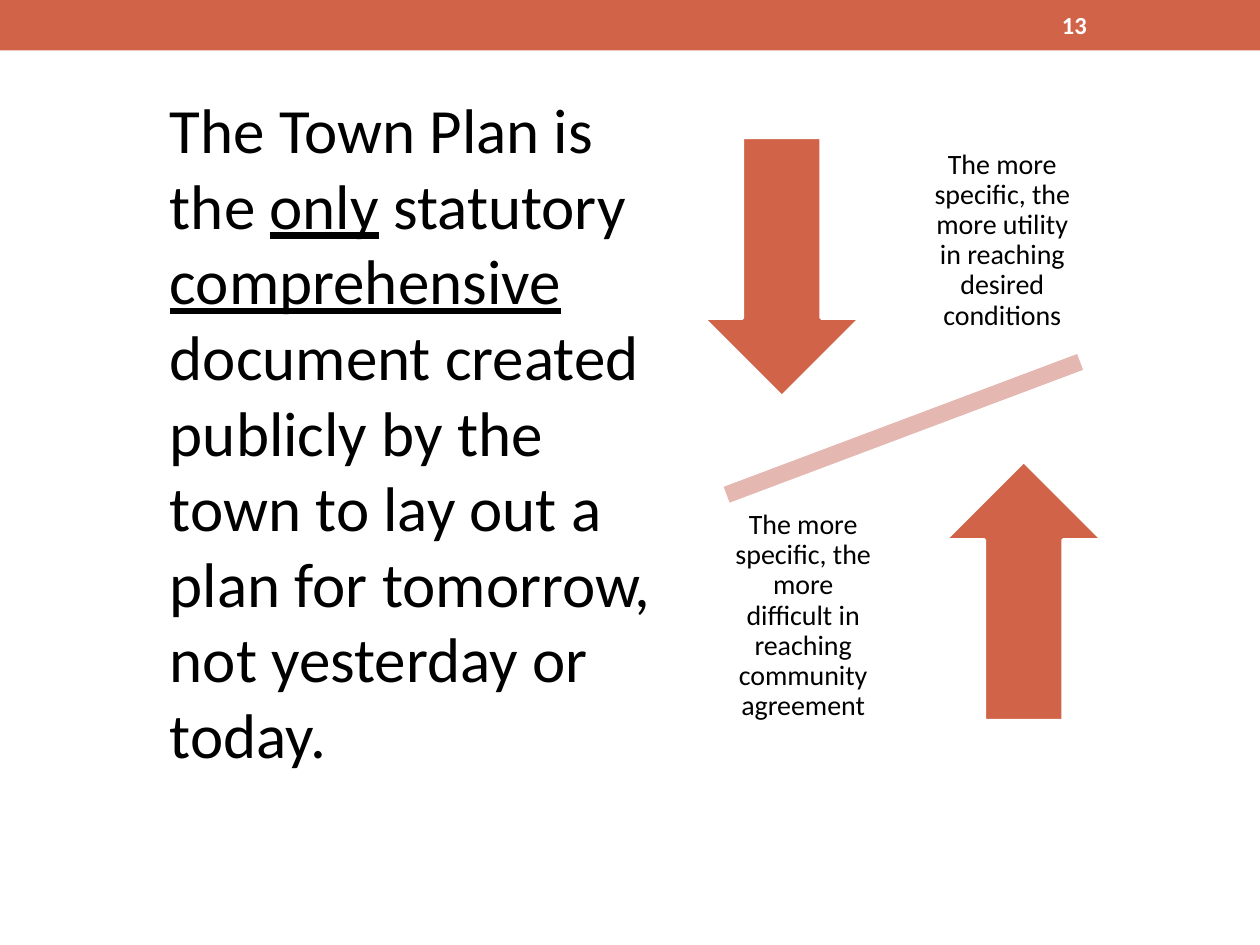
from pptx import Presentation
from pptx.util import Inches, Pt
from pptx.dml.color import RGBColor
from pptx.enum.shapes import MSO_SHAPE as Geo
from pptx.enum.text import PP_ALIGN as Align, MSO_ANCHOR as Anchor

RUST, PINK, WHITE, BLACK = "D16349", "E5B7B1", "FFFFFF", "000000"


def color(item, hue):
    """Set a solid colour on a fill or a font."""
    if hasattr(item, "solid"):
        item.solid()
        item.fore_color.rgb = RGBColor.from_string(hue)
    else:
        item.color.rgb = RGBColor.from_string(hue)


def add_text(box, parts, size, hue):
    """Add a wrapped text box of (words, underlined) parts."""
    frame = slide.shapes.add_textbox(*map(Inches, box)).text_frame
    frame.word_wrap = True
    for words, under in parts:
        run = frame.paragraphs[0].add_run()
        run.text = words
        run.font.name = "Calibri"
        run.font.size = Pt(size)
        color(run.font, hue)
        if under:
            run.font.underline = True
    return frame


deck = Presentation()
deck.slide_width, deck.slide_height = Inches(10), Inches(7.5)
slide = deck.slides.add_slide(deck.slide_layouts[6])

# Header band and page number
band = slide.shapes.add_shape(Geo.RECTANGLE, 0, 0, Inches(10), Inches(0.4))
band.shadow.inherit = False
color(band.fill, RUST)
band.line.fill.background()
page = add_text((8.33, 0.02, 1.17, 0.36), [("13", False)], 14, WHITE)
page.vertical_anchor = Anchor.MIDDLE
page.paragraphs[0].runs[0].font.bold = True

# Main statement
add_text((1.25, 0.67, 4.08, 6.09), [
    ("The Town Plan is the ", False),
    ("only", True),
    (" statutory ", False),
    ("comprehensive", True),
    (" document created publicly by the town to lay out a plan for "
     "tomorrow, not yesterday or today.", False),
], 36, BLACK)

# Balance bar with opposing arrows
for geo, box, hue, turn in [
    (Geo.MATH_MINUS, (5.11, 3.05, 4.12, 0.7), PINK, 339.4),
    (Geo.DOWN_ARROW, (5.58, 1.09, 1.25, 2.06), RUST, 0),
    (Geo.UP_ARROW, (7.5, 3.66, 1.25, 2.06), RUST, 0),
]:
    shape = slide.shapes.add_shape(geo, *map(Inches, box))
    shape.shadow.inherit = False
    shape.rotation = turn
    color(shape.fill, hue)
    color(shape.line.fill, WHITE)
    shape.line.width = Pt(2.08)

# Arrow captions
for left, top, words in [
    (7.29, 0.83, "The more specific, the more utility in reaching "
                 "desired conditions"),
    (5.71, 3.81, "The more specific, the more difficult in reaching "
                 "community agreement"),
]:
    frame = add_text((left, top, 1.33, 2.16), [(words, False)], 16, BLACK)
    frame.vertical_anchor = Anchor.MIDDLE
    frame.margin_left = frame.margin_right = Inches(0.12)
    frame.margin_top = frame.margin_bottom = Inches(0.12)
    frame.paragraphs[0].alignment = Align.CENTER
    frame.paragraphs[0].line_spacing = 0.9

deck.save("out.pptx")
